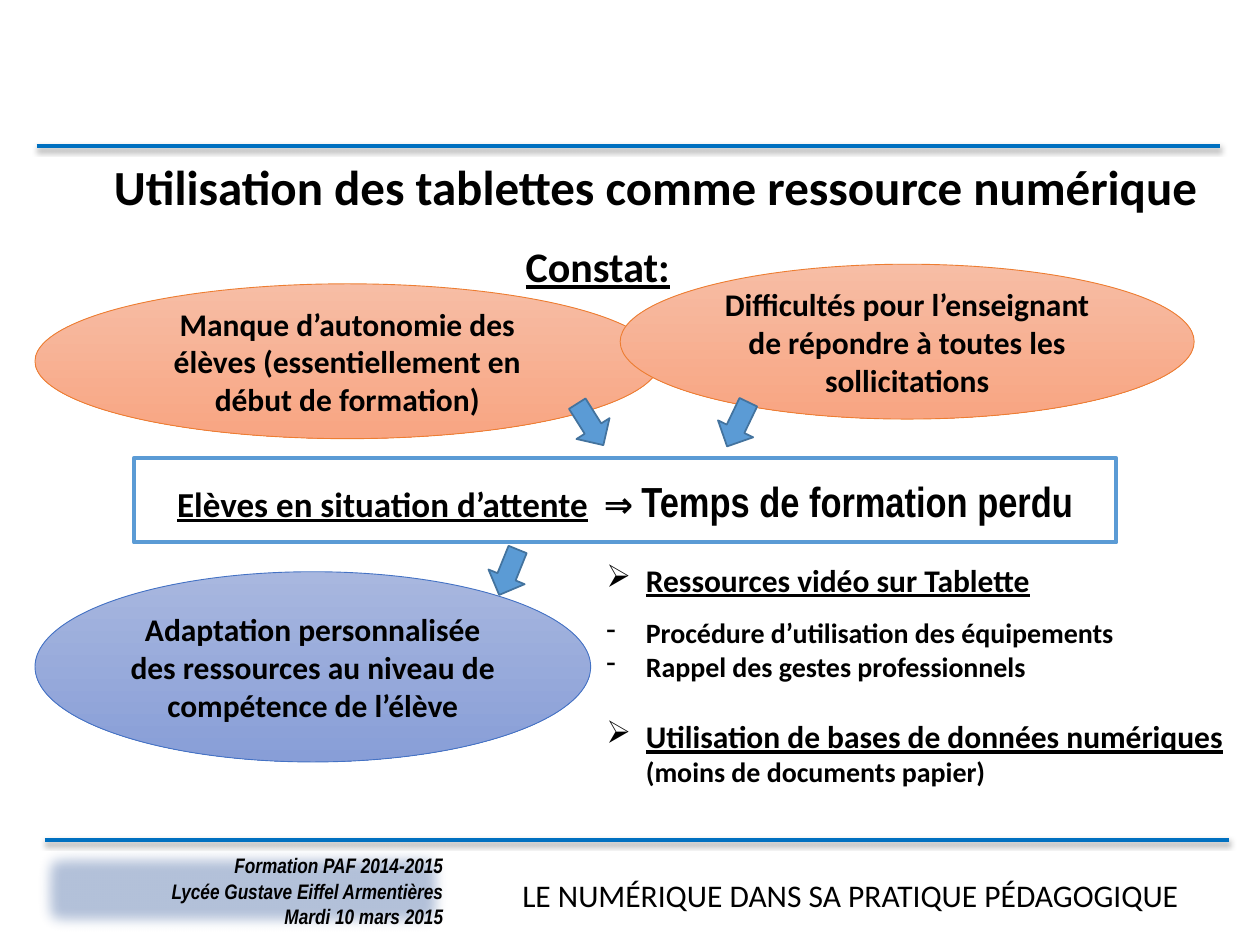
from dataclasses import dataclass

import pptx
import pptx.dml.color
import pptx.enum.dml
import pptx.enum.shapes
import pptx.enum.text
import pptx.oxml
import pptx.oxml.ns
import pptx.presentation
import pptx.shapes.autoshape
import pptx.slide
import pptx.text.text
import pptx.util

Pt = pptx.util.Pt
RGBColor = pptx.dml.color.RGBColor
Shape = pptx.enum.shapes.MSO_SHAPE
Align = pptx.enum.text.PP_ALIGN
Anchor = pptx.enum.text.MSO_ANCHOR

BLACK = RGBColor(0x00, 0x00, 0x00)
RULE_BLUE = RGBColor(0x00, 0x70, 0xC0)
FOOTER_BLUE = RGBColor(0x2F, 0x55, 0x97)
ARROW_BLUE = RGBColor(0x5B, 0x9B, 0xD5)
ARROW_EDGE = RGBColor(0x43, 0x73, 0x9E)
ORANGE_TOP = RGBColor(0xF7, 0xBD, 0xA5)
ORANGE_BOTTOM = RGBColor(0xF8, 0xA5, 0x82)
ORANGE_EDGE = RGBColor(0xED, 0x7D, 0x31)
INDIGO_TOP = RGBColor(0xA8, 0xB7, 0xDF)
INDIGO_BOTTOM = RGBColor(0x88, 0x9E, 0xD7)
INDIGO_EDGE = RGBColor(0x44, 0x72, 0xC4)
BODY_FONT = "Calibri"
NARROW_FONT = "Arial Narrow"


@dataclass(frozen=True)
class Area:
    left: float
    top: float
    width: float
    height: float

    def lengths(self) -> list[pptx.util.Length]:
        return [Pt(value) for value in (self.left, self.top, self.width, self.height)]


@dataclass(frozen=True)
class Palette:
    top: RGBColor
    bottom: RGBColor
    edge: RGBColor


@dataclass(frozen=True)
class Bubble:
    text: str
    area: Area
    palette: Palette


@dataclass(frozen=True)
class Arrow:
    left: float
    top: float
    rotation: float


@dataclass(frozen=True)
class Item:
    mark: str
    text: str
    size: float
    underline: bool = False
    detail: str = ""
    space_before: float = 0


ORANGE = Palette(ORANGE_TOP, ORANGE_BOTTOM, ORANGE_EDGE)
INDIGO = Palette(INDIGO_TOP, INDIGO_BOTTOM, INDIGO_EDGE)
BUBBLES = [
    Bubble("Manque d’autonomie des élèves (essentiellement en début de formation)",
           Area(20, 162.2, 357, 88.5), ORANGE),
    Bubble("Adaptation personnalisée des ressources au niveau de compétence de l’élève",
           Area(20, 326.7, 317.5, 108.7), INDIGO),
    Bubble("Difficultés pour l’enseignant de répondre à toutes les sollicitations",
           Area(354.4, 151, 328, 88.5), ORANGE),
]
ARROWS = [Arrow(326.2, 228.5, 327.8), Arrow(410.4, 228.5, 25.7), Arrow(279.4, 313, 22.1)]
RULES = [(20.9, 83.5), (25.6, 479.8)]
RULE_LENGTH = 676.5
FOOTER = ["Formation PAF 2014-2015", "Lycée Gustave Eiffel Armentières", "Mardi 10 mars 2015"]
ITEMS = [
    Item("➢", "Ressources vidéo sur Tablette", 18, underline=True),
    Item("-", "Procédure d’utilisation des équipements", 16, space_before=9.8),
    Item("-", "Rappel des gestes professionnels", 16),
    Item("➢", "Utilisation de bases de données numériques ", 18, underline=True,
         detail="(moins de documents papier)", space_before=19.5),
]


def add_span(para: pptx.text.text._Paragraph, text: str, *, size: float,
             font: str = BODY_FONT, bold: bool = True, italic: bool = False,
             underline: bool = False) -> None:
    span = para.add_run()
    span.text = text
    span.font.name = font
    span.font.size = Pt(size)
    span.font.bold = bold
    span.font.italic = italic
    span.font.underline = underline
    span.font.color.rgb = BLACK


def set_frame(box: pptx.shapes.autoshape.Shape, anchor: Anchor,
              margins: tuple[float, float, float, float] = (7.2, 3.6, 7.2, 3.6),
              wrap: bool = True) -> pptx.text.text.TextFrame:
    frame = box.text_frame
    frame.word_wrap = wrap
    frame.vertical_anchor = anchor
    frame.margin_left, frame.margin_top, frame.margin_right, frame.margin_bottom = map(Pt, margins)
    return frame


def add_label(page: pptx.slide.Slide, area: Area, text: str, *, anchor: Anchor = Anchor.TOP,
              wrap: bool = True, spacing: float = 1.0, **style) -> None:
    frame = set_frame(page.shapes.add_textbox(*area.lengths()), anchor, wrap=wrap)
    para = frame.paragraphs[0]
    para.alignment = Align.CENTER
    para.line_spacing = spacing
    add_span(para, text, **style)


def add_figure(page: pptx.slide.Slide, kind: Shape, area: Area) -> pptx.shapes.autoshape.Shape:
    figure = page.shapes.add_shape(kind, *area.lengths())
    figure.shadow.inherit = False
    return figure


def set_line(figure, color: RGBColor, width: float) -> None:
    figure.line.color.rgb = color
    figure.line.width = Pt(width)


def add_effect(parent, content: str) -> None:
    parent.append(pptx.oxml.parse_xml(content.replace(">", f" {pptx.oxml.ns.nsdecls('a')}>", 1)))


def add_rule(page: pptx.slide.Slide, left: float, top: float) -> None:
    rule = page.shapes.add_connector(pptx.enum.shapes.MSO_CONNECTOR.STRAIGHT,
                                     Pt(left), Pt(top), Pt(left + RULE_LENGTH), Pt(top))
    set_line(rule, RULE_BLUE, 2.25)
    add_effect(rule._element.spPr,
               '<a:effectLst><a:outerShdw blurRad="40000" dist="23000" dir="5400000" '
               'rotWithShape="0"><a:srgbClr val="000000"><a:alpha val="35000"/></a:srgbClr>'
               '</a:outerShdw></a:effectLst>')


def add_footer(page: pptx.slide.Slide) -> None:
    panel = add_figure(page, Shape.RECTANGLE, Area(17.3, 480.2, 242.6, 56.2))
    panel.fill.solid()
    panel.fill.fore_color.rgb = FOOTER_BLUE
    panel.line.fill.background()
    properties = panel._element.spPr
    color = properties.find(".//" + pptx.oxml.ns.qn("a:srgbClr"))
    add_effect(color, '<a:alpha val="36000"></a:alpha>')
    effects = properties.find(pptx.oxml.ns.qn("a:effectLst"))
    add_effect(effects, '<a:softEdge rad="112500"></a:softEdge>')
    frame = set_frame(panel, Anchor.TOP, (6.5, 7.2, 6.5, 2.9))
    for index, text in enumerate(FOOTER):
        para = frame.add_paragraph() if index else frame.paragraphs[0]
        para.alignment = Align.RIGHT
        add_span(para, text, size=12, font=NARROW_FONT, italic=True)


def add_bubble(page: pptx.slide.Slide, bubble: Bubble) -> None:
    ellipse = add_figure(page, Shape.OVAL, bubble.area)
    ellipse.fill.gradient()
    ellipse.fill.gradient_angle = 270
    for stop, color in zip(ellipse.fill.gradient_stops, (bubble.palette.top, bubble.palette.bottom)):
        stop.color.rgb = color
    set_line(ellipse, bubble.palette.edge, 0.5)
    para = set_frame(ellipse, Anchor.MIDDLE).paragraphs[0]
    para.alignment = Align.CENTER
    add_span(para, bubble.text, size=18)


def add_arrow(page: pptx.slide.Slide, arrow: Arrow) -> None:
    figure = add_figure(page, Shape.DOWN_ARROW, Area(arrow.left, arrow.top, 22.3, 28))
    figure.rotation = arrow.rotation
    figure.fill.solid()
    figure.fill.fore_color.rgb = ARROW_BLUE
    set_line(figure, ARROW_EDGE, 1)


def add_consequence(page: pptx.slide.Slide) -> None:
    panel = add_figure(page, Shape.RECTANGLE, Area(76.5, 261.8, 561.5, 48.2))
    panel.fill.background()
    set_line(panel, ARROW_BLUE, 2.25)
    para = set_frame(panel, Anchor.MIDDLE, (3.6, 3.6, 3.6, 3.6)).paragraphs[0]
    para.alignment = Align.CENTER
    add_span(para, "Elèves en situation d’attente", size=20, underline=True)
    add_span(para, "  ⇒ ", size=20)
    add_span(para, "Temps de formation perdu", size=24, font=NARROW_FONT)


def add_items(page: pptx.slide.Slide) -> None:
    box = page.shapes.add_textbox(*Area(343, 320.5, 363, 150).lengths())
    frame = set_frame(box, Anchor.TOP, (3.6, 0, 3.6, 0))
    for index, item in enumerate(ITEMS):
        para = frame.add_paragraph() if index else frame.paragraphs[0]
        para.space_before = Pt(item.space_before)
        properties = para._p.get_or_add_pPr()
        properties.set("marL", str(Pt(22.5)))
        properties.set("indent", str(-Pt(22.5)))
        add_effect(properties, f'<a:buChar char="{item.mark}"></a:buChar>')
        add_span(para, item.text, size=item.size, underline=item.underline)
        if item.detail:
            add_span(para, item.detail, size=16)


def main() -> None:
    deck = pptx.Presentation()
    deck.slide_width, deck.slide_height = Pt(720), Pt(540)
    page = deck.slides.add_slide(deck.slide_layouts[6])
    for left, top in RULES:
        add_rule(page, left, top)
    add_footer(page)
    add_label(page, Area(281, 497, 410, 29), "LE NUMÉRIQUE DANS SA PRATIQUE PÉDAGOGIQUE",
              size=18, bold=False)
    add_label(page, Area(54, 83, 641, 51), "Utilisation des tablettes comme ressource numérique",
              anchor=Anchor.MIDDLE, spacing=0.9, size=28)
    for bubble in BUBBLES:
        add_bubble(page, bubble)
    add_consequence(page)
    add_label(page, Area(292.5, 134, 98, 36), "Constat:", wrap=False, size=24, underline=True)
    add_items(page)
    for arrow in ARROWS:
        add_arrow(page, arrow)
    deck.save("out.pptx")


if __name__ == "__main__":
    main()
